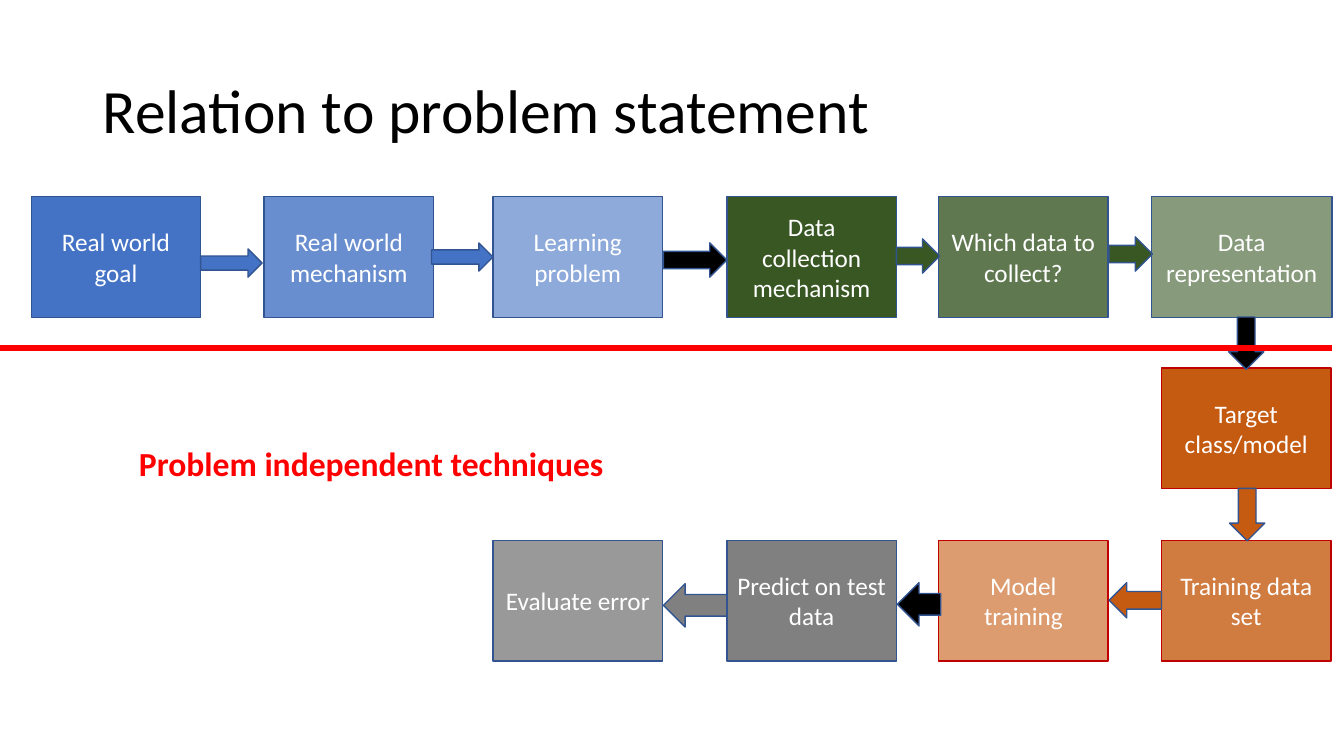
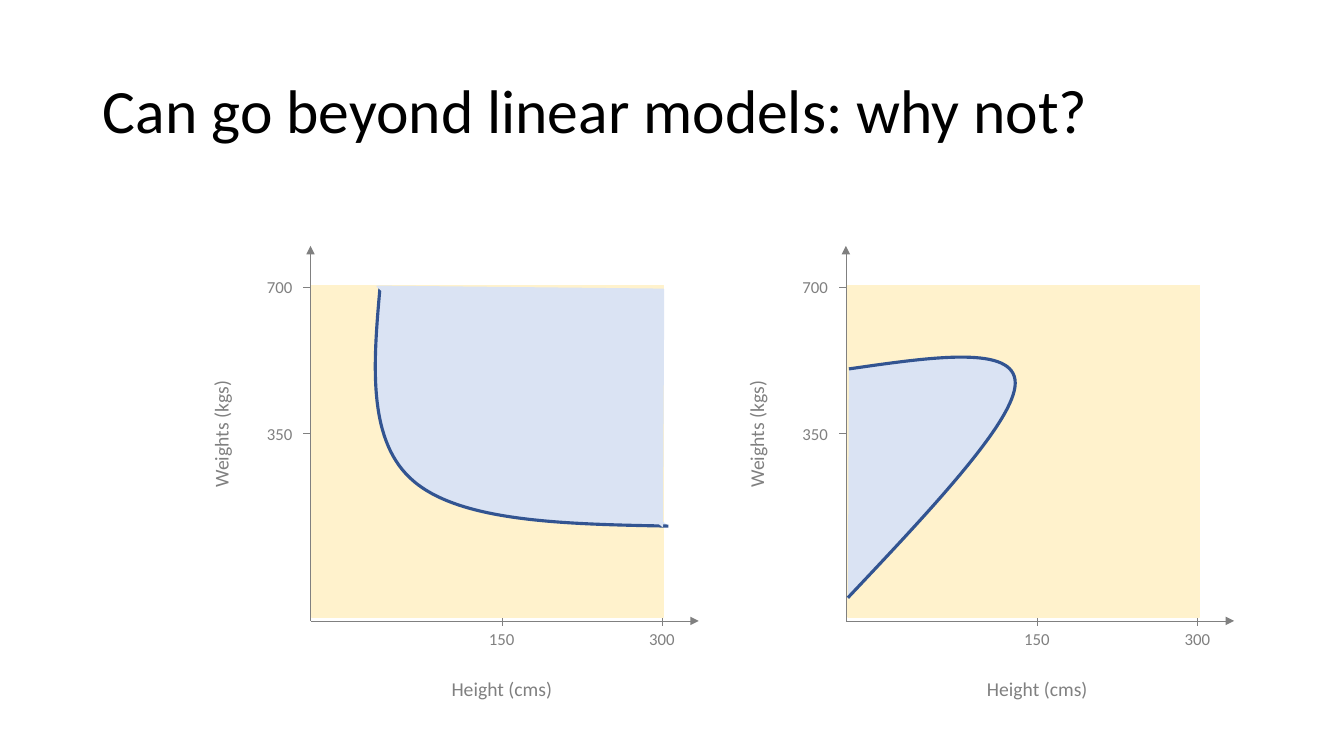
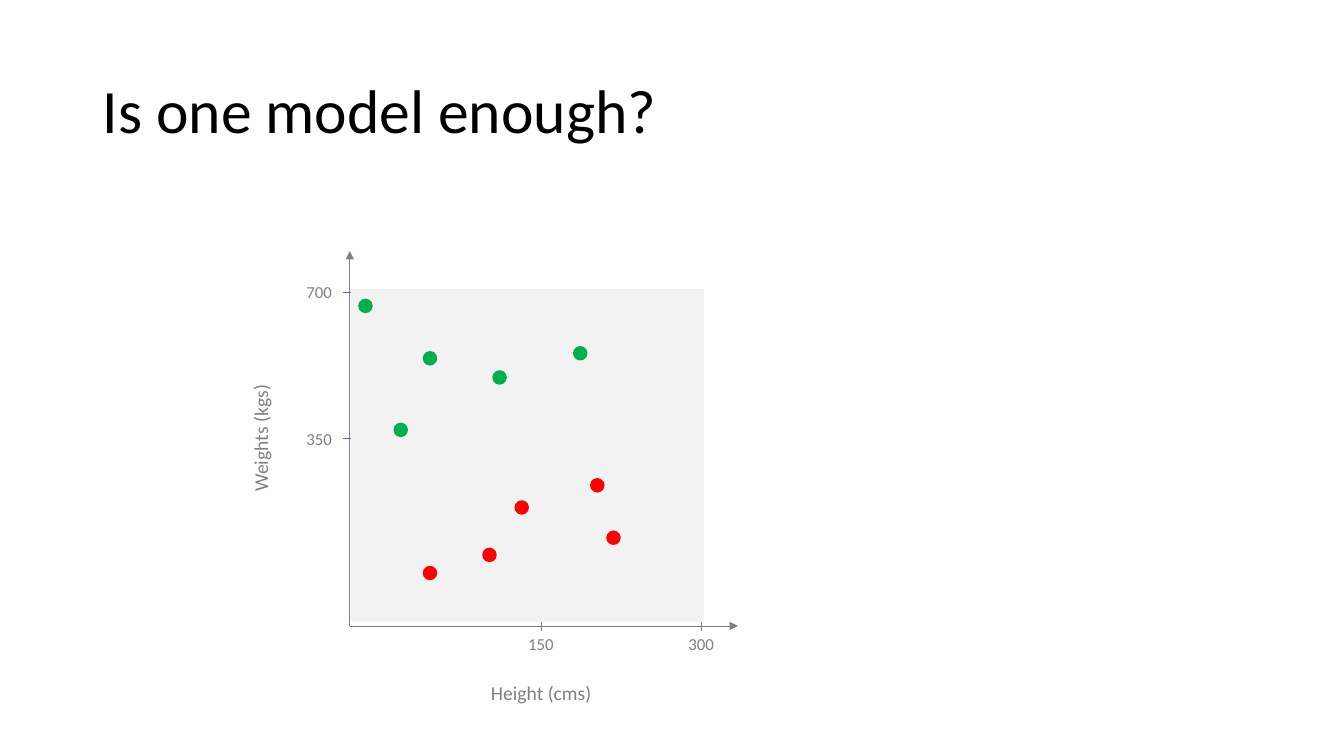
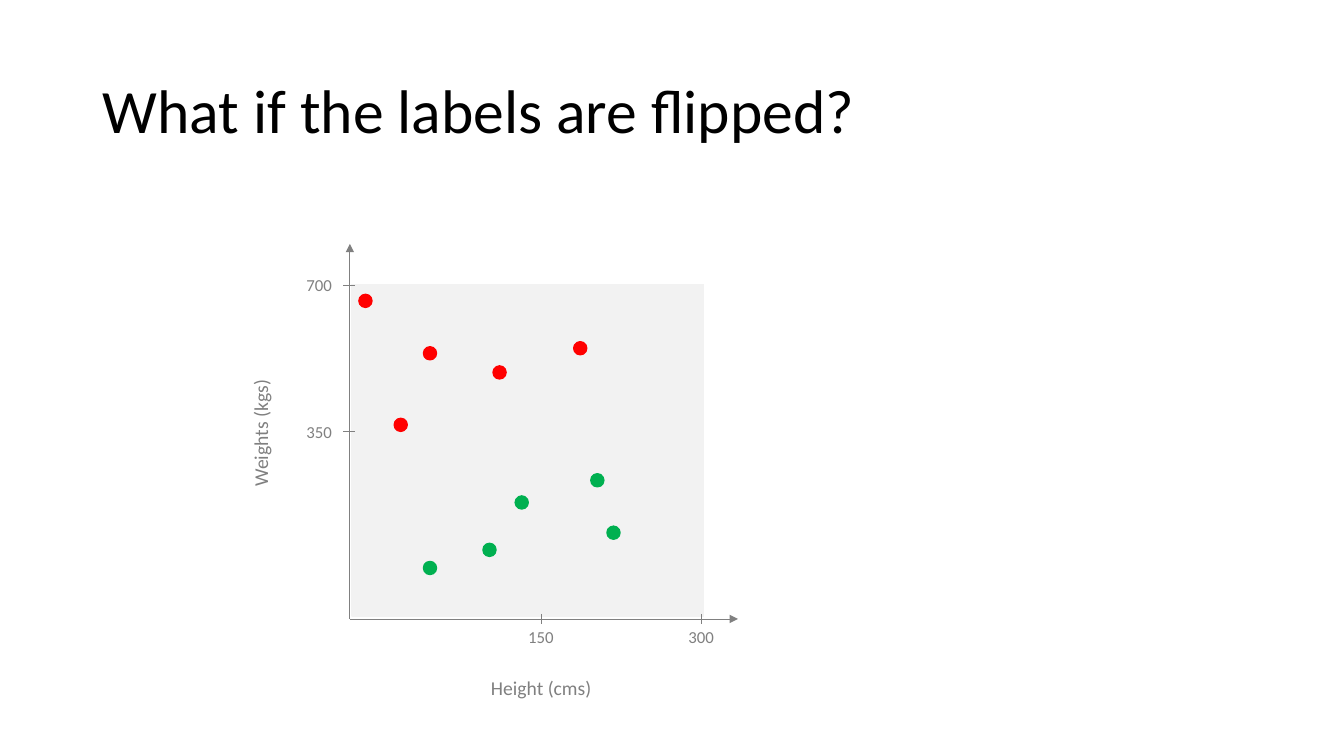
from lxml import etree
from pptx import Presentation
from pptx.dml.color import RGBColor
from pptx.enum import shapes, text
from pptx.oxml import ns
from pptx.util import Inches, Pt

# Shared look
FONT = "Calibri"
HEX = {
    "blue": "4472C4", "navy": "325491", "pale": "DAE3F3",
    "green": "385723", "lime": "00B050", "red": "FF0000", "wine": "C00000",
    "rust": "C55A11", "sand": "FFF2CC", "mist": "F2F2F2",
    "grey": "808080", "black": "000000", "white": "FFFFFF",
}
SHAPE = shapes.MSO_SHAPE
ALIGN = text.PP_ALIGN
TITLE = (0.92, 0.4, 11.5, 1.45)

# Flow: label, left, width, fill, opacity, line
BOX_H = 1.2
W = 1.68
ROWS = [
    (1.95, [
        ("Real world goal", 0.31, W, "blue", 100, "navy"),
        ("Real world mechanism", 2.62, W, "blue", 80, "navy"),
        ("Learning problem", 4.89, W, "blue", 60, "navy"),
        ("Data collection mechanism", 7.21, W, "green", 100, "navy"),
        ("Which data to collect?", 9.31, W, "green", 80, "navy"),
        ("Data representation", 11.42, 1.79, "green", 60, "navy"),
    ]),
    (3.65, [("Target class/model", 11.52, W, "rust", 100, "wine")]),
    (5.36, [
        ("Training data set", 11.52, W, "rust", 80, "wine"),
        ("Model training", 9.31, W, "rust", 60, "wine"),
        ("Predict on test data", 7.21, W, "grey", 100, "navy"),
        ("Evaluate error", 4.89, W, "grey", 80, "navy"),
    ]),
]
# Arrows: place, turn, fill
ARROWS = [
    ((1.99, 2.47, 0.61, 0.28), 0, "blue"),
    ((4.28, 2.41, 0.61, 0.28), 0, "blue"),
    ((6.58, 2.41, 0.63, 0.34), 0, "black"),
    ((8.89, 2.37, 0.43, 0.34), 0, "green"),
    ((11, 2.35, 0.43, 0.34), 0, "green"),
    ((12.1, 3.23, 0.52, 0.35), 90, "black"),
    ((12.11, 4.93, 0.52, 0.35), 90, "rust"),
    ((11, 5.78, 0.52, 0.35), 180, "rust"),
    ((8.9, 5.78, 0.43, 0.43), 180, "black"),
    ((6.58, 5.79, 0.63, 0.43), 180, "grey"),
]

# Plots: ticks as label and distance from the origin
X_TICKS = [("150", 1.9), ("300", 3.49)]
Y_TICKS = [("350", 1.86), ("700", 3.31)]
PANE = 3.49, 3.29

# Regions: bounds, then steps of one point (move, line) or three (cubic)
BEND = (3.72, 2.85, 2.9, 2.37), [
    ("moveTo", [(3.77, 2.85)]),
    ("cubicBezTo", [(3.7, 3.62), (3.64, 4.39), (4.11, 4.78)]),
    ("cubicBezTo", [(4.59, 5.18), (5.61, 5.2), (6.63, 5.22)]),
]
WEDGE = (3.74, 2.84, 2.84, 2.38), [
    ("moveTo", [(3.74, 2.84)]),
    ("lnTo", [(6.58, 2.87)]),
    ("cubicBezTo", [(6.58, 3.65), (6.57, 4.44), (6.57, 5.22)]),
    ("lnTo", [(3.74, 2.84)]),
    ("close", []),
]
HOOK = (8.41, 3.54, 1.66, 2.39), [
    ("moveTo", [(8.42, 3.66)]),
    ("cubicBezTo", [(9.25, 3.54), (10.07, 3.42), (10.07, 3.8)]),
    ("cubicBezTo", [(10.07, 4.17), (9.24, 5.05), (8.41, 5.93)]),
]

# Dots: offsets from the top left of the pane
DOT = 0.13
UPPER = [(0.07, 0.1), (0.42, 1.33), (0.71, 0.62), (1.4, 0.81), (2.2, 0.57)]
LOWER = [(2.37, 1.88), (2.53, 2.4), (1.3, 2.57), (1.62, 2.1), (0.71, 2.75)]


def rgb(name):
    return RGBColor.from_string(HEX[name])


def put(obj, **vals):
    for key, val in vals.items():
        setattr(obj, key, val)


def write(shape, words, size, color, bold=False, align=ALIGN.LEFT):
    para = shape.text_frame.paragraphs[0]
    para.alignment = align
    run = para.add_run()
    run.text = words
    put(run.font, name=FONT, size=Pt(size), bold=bold)
    run.font.color.rgb = rgb(color)
    return para


def paint(shape, fill, line, width=1, alpha=100):
    shape.shadow.inherit = False
    shape.fill.solid()
    shape.fill.fore_color.rgb = rgb(fill)
    shape.line.color.rgb = rgb(line)
    shape.line.width = Pt(width)
    if alpha < 100:
        tone = shape._element.spPr.find(ns.qn("a:solidFill"))[0]
        etree.SubElement(tone, ns.qn("a:alpha"), val=str(alpha * 1000))


def block(slide, kind, place, fill, line, alpha=100):
    shape = slide.shapes.add_shape(kind, *map(Inches, place))
    paint(shape, fill, line, alpha=alpha)
    return shape


def label(slide, words, place, size, color="grey", bold=False, turn=0):
    box = slide.shapes.add_textbox(*map(Inches, place))
    box.rotation = turn
    put(box.text_frame, word_wrap=False,
        auto_size=text.MSO_AUTO_SIZE.SHAPE_TO_FIT_TEXT)
    write(box, words, size, color, bold)


def rule(slide, ends, color="grey", width=0.5, arrow=False):
    line = slide.shapes.add_connector(
        shapes.MSO_CONNECTOR.STRAIGHT, *map(Inches, ends))
    line.line.color.rgb = rgb(color)
    line.line.width = Pt(width)
    props = line._element.spPr
    if arrow:
        etree.SubElement(props.find(ns.qn("a:ln")), ns.qn("a:tailEnd"),
                         type="triangle")
    etree.SubElement(props, ns.qn("a:effectLst"))


def region(slide, bounds, steps, line, width):
    """Size a freeform by its bounds, then give it a curved outline."""
    left, top, wide, high = bounds
    form = slide.shapes.build_freeform(Inches(left), Inches(top))
    form.add_line_segments([(Inches(left + wide), Inches(top + high))],
                           close=False)
    shape = form.convert_to_shape()
    track = shape._element.spPr.find(".//" + ns.qn("a:path"))
    for old in list(track):
        track.remove(old)
    for kind, spots in steps:
        step = etree.SubElement(track, ns.qn("a:" + kind))
        for x, y in spots:
            etree.SubElement(step, ns.qn("a:pt"), x=str(Inches(x - left)),
                             y=str(Inches(y - top)))
    paint(shape, "pale", line, width)


def page(deck, words):
    slide = deck.slides.add_slide(deck.slide_layouts[5])
    head = slide.shapes.title
    put(head, **dict(zip(("left", "top", "width", "height"),
                         map(Inches, TITLE))))
    head.text_frame.vertical_anchor = text.MSO_ANCHOR.MIDDLE
    write(head, words, 44, "black").line_spacing = 0.9
    return slide


def plot(slide, x, y, left, top, fill, tick="grey", under=False):
    """Axes cross at x, y; the pane starts at left, top."""
    def pane():
        block(slide, SHAPE.RECTANGLE, (left, top, *PANE), fill, fill)

    if under:
        pane()
    rule(slide, (x, y, x, y - 3.72), arrow=True)
    rule(slide, (x, y, x + 3.85, y), arrow=True)
    label(slide, "Height (cms)", (x + 1.3, top + 3.84, 1.21, 0.34), 14)
    label(slide, "Weights (kgs)", (x - 1.52, top + 1.3, 1.27, 0.34), 14,
          turn=270)
    for name, gap in X_TICKS:
        at = x + gap
        rule(slide, (at, y - 0.05, at, y + 0.05))
        label(slide, name, (at - 0.23, y + 0.03, 0.46, 0.3), 12)
    for name, gap in Y_TICKS:
        at = y - gap
        rule(slide, (x + 0.05, at, x - 0.07, at), tick)
        label(slide, name, (x - 0.53, at - 0.15, 0.46, 0.3), 12)
    if not under:
        pane()


def scatter(slide, left, top, high, low):
    for color, spots in ((high, UPPER), (low, LOWER)):
        for dx, dy in spots:
            block(slide, SHAPE.OVAL, (left + dx, top + dy, DOT, DOT),
                  color, color)


def main():
    deck = Presentation()
    put(deck, slide_width=Inches(13.33), slide_height=Inches(7.5))

    # Flow of steps
    slide = page(deck, "Relation to problem statement")
    for top, row in ROWS:
        for words, left, wide, fill, alpha, line in row:
            box = block(slide, SHAPE.RECTANGLE, (left, top, wide, BOX_H),
                        fill, line, alpha)
            put(box.text_frame, word_wrap=True,
                vertical_anchor=text.MSO_ANCHOR.MIDDLE)
            write(box, words, 18, "white", align=ALIGN.CENTER)
    for place, turn, fill in ARROWS:
        block(slide, SHAPE.RIGHT_ARROW, place, fill, "navy").rotation = turn
    rule(slide, (0, 3.45, 13.21, 3.45), "red", 4.5)
    label(slide, "Problem independent techniques", (1.28, 4.34, 4.86, 0.5),
          24, "red", bold=True)

    # Curved regions
    slide = page(deck, "Can go beyond linear models: why not?")
    plot(slide, 3.08, 6.16, 3.09, 2.83, "sand")
    region(slide, *BEND, "navy", 2.25)
    region(slide, *WEDGE, "pale", 1)
    plot(slide, 8.39, 6.16, 8.41, 2.83, "sand")
    region(slide, *HOOK, "navy", 2.25)

    # Labelled points
    slide = page(deck, "Is one model enough?")
    plot(slide, 3.47, 6.21, 3.49, 2.87, "mist", tick="blue")
    scatter(slide, 3.49, 2.87, "lime", "red")

    # Flipped labels
    slide = page(deck, "What if the labels are flipped?")
    plot(slide, 3.47, 6.14, 3.49, 2.82, "mist", under=True)
    scatter(slide, 3.49, 2.82, "red", "lime")

    deck.save("out.pptx")


if __name__ == "__main__":
    main()
